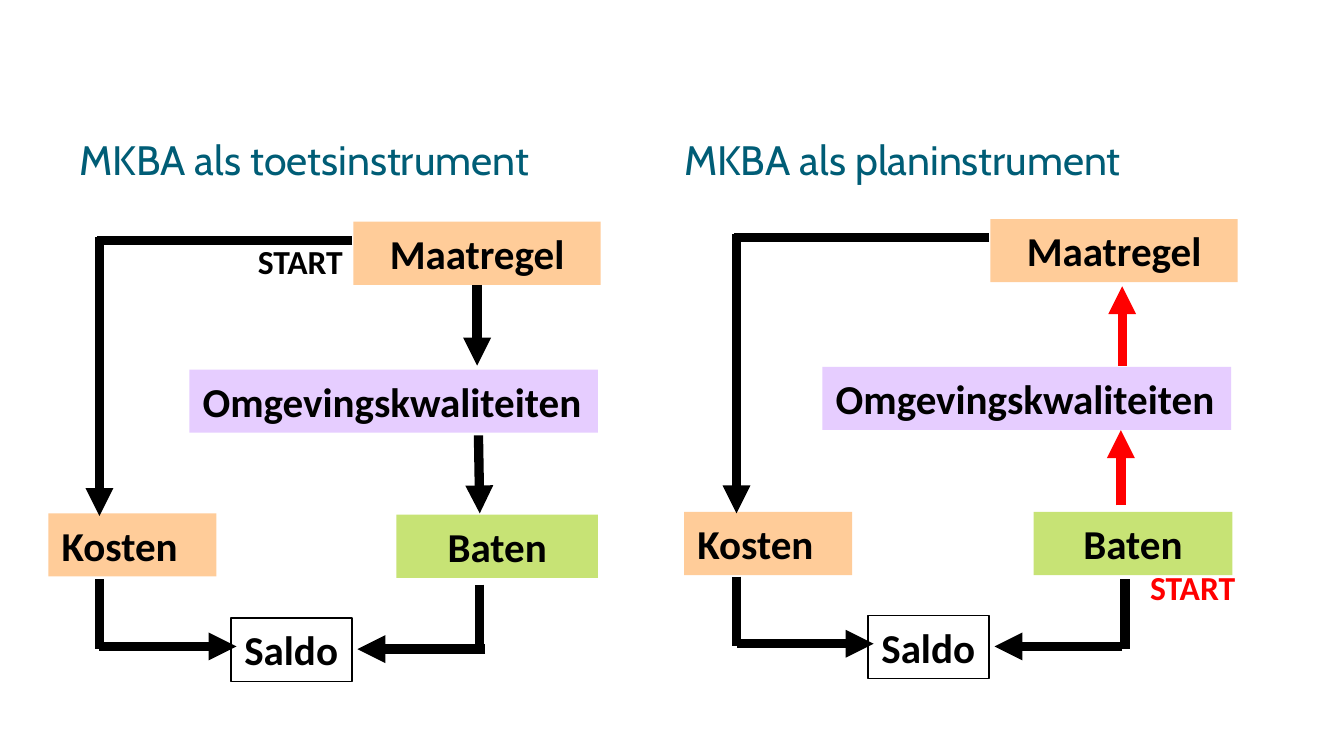
"""Build the slide that sets MKBA as a test tool beside MKBA as a planning tool."""
from lxml import etree
from pptx import Presentation
from pptx.dml.color import RGBColor
from pptx.enum.shapes import MSO_CONNECTOR, MSO_SHAPE
from pptx.enum.text import MSO_ANCHOR, MSO_AUTO_SIZE, PP_ALIGN
from pptx.oxml.ns import qn
from pptx.util import Inches, Pt

RECT = MSO_SHAPE.RECTANGLE
LINE = MSO_CONNECTOR.STRAIGHT
LEFT, MID = PP_ALIGN.LEFT, PP_ALIGN.CENTER
TOP = MSO_ANCHOR.TOP
GROW, FIXED = MSO_AUTO_SIZE.SHAPE_TO_FIT_TEXT, MSO_AUTO_SIZE.NONE

HEX = {"black": "000000", "red": "FF0000", "teal": "005D76",
       "peach": "FFCC99", "violet": "CC99FF", "green": "99CC00"}
ALPHA = {"violet": 49, "green": 54}
TITLE = "MKBA als toetsinstrument\tMKBA als planinstrument"
WIDE = 10
HIGH = 0.47
NEAR = Inches(0.02)

# text, left, top, width, fill, align, wrap
BOXES = [
    ("Maatregel", 2.63, 1.65, 1.84, "peach", MID, True),
    ("Saldo", 1.72, 4.6, 0.9, None, LEFT, False),
]
# from x, from y, to x, to y, colour, arrow
LINES = [
    (2.62, 1.79, 0.72, 1.79, "black", False),
    (0.74, 1.76, 0.74, 3.84, "black", True),
    (3.61, 4.83, 2.66, 4.83, "black", True),
    (0.74, 4.81, 1.76, 4.81, "black", True),
    (0.74, 4.31, 0.74, 4.83, "black", False),
]
PANELS = [
    {"shift": (0, 0), "start": (1.82, 1.74, "black"),
     "boxes": [("Omgevingskwaliteiten", 1.41, 2.75, 3.04, "violet", LEFT, False),
               ("Baten", 2.95, 3.83, 1.5, "green", MID, True),
               ("Kosten", 0.36, 3.82, 1.25, "peach", LEFT, True)],
     "lines": [(3.54, 2.13, 3.55, 2.72, "black", True),
               (3.56, 3.24, 3.57, 3.82, "black", True),
               (3.57, 4.35, 3.57, 4.87, "black", False)]},
    {"shift": (4.74, -0.02), "start": (3.72, 4.19, "red"),
     "boxes": [("Omgevingskwaliteiten", 1.38, 2.75, 3.04, "violet", LEFT, False),
               ("Baten", 2.95, 3.83, 1.48, "green", MID, True),
               ("Kosten", 0.35, 3.83, 1.25, "peach", LEFT, True)],
     "lines": [(3.61, 2.74, 3.61, 2.15, "red", True),
               (3.6, 3.78, 3.6, 3.22, "red", True),
               (3.63, 4.33, 3.63, 4.85, "black", False)]},
]


def rgb(name):
    return RGBColor.from_string(HEX[name])


def write(shape, text, size, face, color, bold=True, align=LEFT,
          wrap=True, fit=GROW):
    frame = shape.text_frame
    frame.word_wrap = wrap
    frame.auto_size = fit
    frame.vertical_anchor = TOP
    para = frame.paragraphs[0]
    para.text = text
    para.alignment = align
    font = para.font
    font.size, font.name, font.bold = Pt(size), face, bold
    font.color.rgb = rgb(color)
    return para


def add_box(slide, shift, text, x, y, wide, fill, align, wrap):
    box = slide.shapes.add_shape(RECT, Inches(x + shift[0]), Inches(y + shift[1]),
                                 Inches(wide), Inches(HIGH))
    box.shadow.inherit = False
    if fill:
        box.fill.solid()
        box.fill.fore_color.rgb = rgb(fill)
        box.line.fill.background()
        if fill in ALPHA:
            tint = box._element.spPr.find(".//" + qn("a:srgbClr"))
            etree.SubElement(tint, qn("a:alpha"), val=str(ALPHA[fill] * 1000))
    else:
        box.fill.background()
        box.line.color.rgb = rgb("black")
        box.line.width = Pt(0.75)
    write(box, text, 22, "Calibri", "black", align=align, wrap=wrap)
    return box


def sides(box):
    x, y, w, h = box.left, box.top, box.width, box.height
    return [(x + w // 2, y), (x, y + h // 2), (x + w // 2, y + h), (x + w, y + h // 2)]


def add_line(slide, shift, boxes, x1, y1, x2, y2, color, arrow):
    dx, dy = shift
    ends = [(Inches(x1 + dx), Inches(y1 + dy)), (Inches(x2 + dx), Inches(y2 + dy))]
    line = slide.shapes.add_connector(LINE, *ends[0], *ends[1])
    line.line.color.rgb = rgb(color)
    line.line.width = Pt(5)
    if arrow:
        etree.SubElement(line.line._get_or_add_ln(), qn("a:tailEnd"), type="triangle")
    etree.SubElement(line._element.spPr, qn("a:effectLst"))
    for (x, y), join in zip(ends, (line.begin_connect, line.end_connect)):
        for box in boxes:
            for side, (sx, sy) in enumerate(sides(box)):
                if abs(x - sx) <= NEAR and abs(y - sy) <= NEAR:
                    join(box, side)


def add_title(slide):
    title = slide.shapes.title
    title.left, title.top = Inches(0.59), Inches(1.06)
    title.width, title.height = Inches(8.59), Inches(0.7)
    frame = title.text_frame
    frame.margin_left = frame.margin_right = 0
    frame.margin_top = frame.margin_bottom = 0
    props = frame.paragraphs[0]._p.get_or_add_pPr()
    tabs = etree.SubElement(props, qn("a:tabLst"))
    etree.SubElement(tabs, qn("a:tab"), pos=str(Inches(4.5)), algn="l")
    para = write(title, TITLE, 22, "Cabin", "teal", bold=False, fit=FIXED)
    para.line_spacing = Pt(22)


def add_panel(slide, panel):
    shift = panel["shift"]
    boxes = [add_box(slide, shift, *row) for row in BOXES + panel["boxes"]]
    for row in LINES + panel["lines"]:
        add_line(slide, shift, boxes, *row)
    x, y, color = panel["start"]
    label = slide.shapes.add_textbox(Inches(x + shift[0]), Inches(y + shift[1]),
                                     Inches(0.84), Inches(0.4))
    write(label, "START", 18, "Calibri", color, wrap=False)


def main():
    deck = Presentation()
    deck.slide_width, deck.slide_height = Inches(WIDE), Inches(WIDE * 9 / 16)
    slide = deck.slides.add_slide(deck.slide_layouts[5])
    add_title(slide)
    for panel in PANELS:
        add_panel(slide, panel)
    deck.save("out.pptx")


if __name__ == "__main__":
    main()
